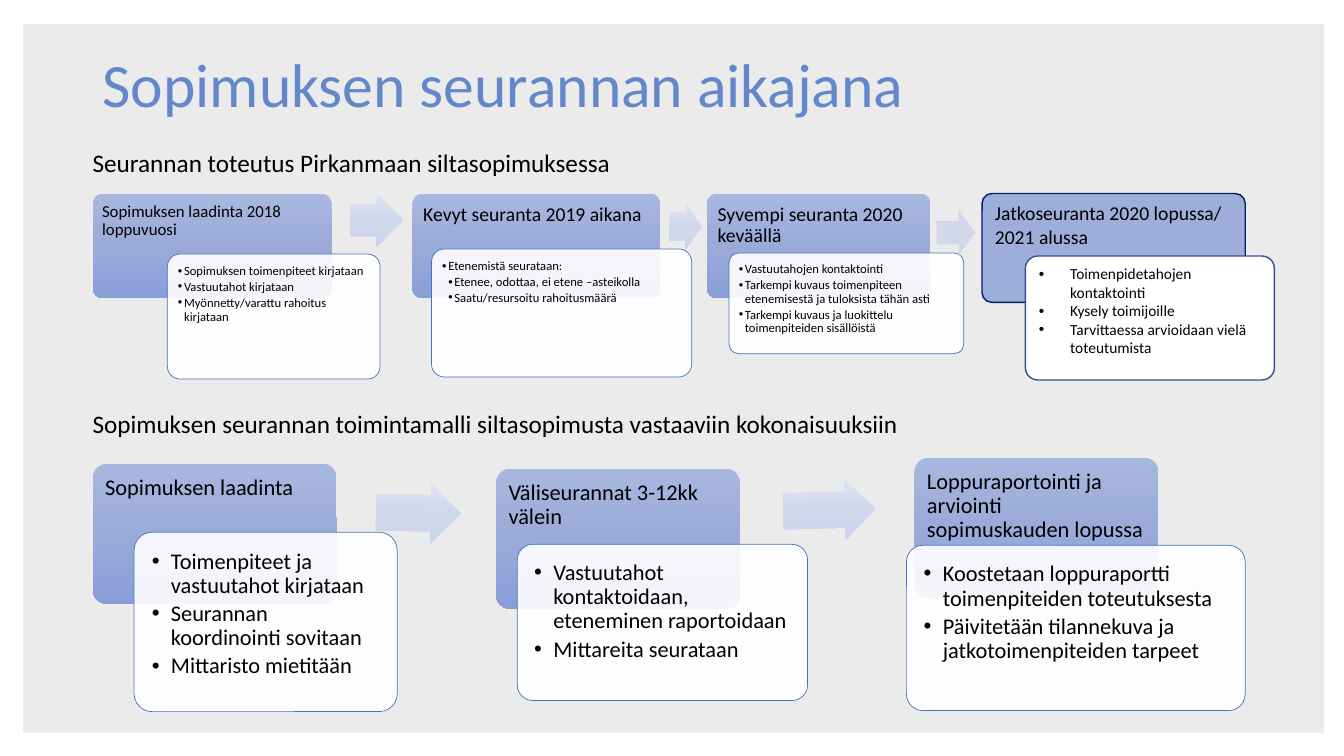
import copy
from dataclasses import dataclass
from typing import Any

import pptx
import pptx.dml.color
import pptx.enum.shapes
import pptx.enum.text
import pptx.oxml.ns
import pptx.shapes.autoshape
import pptx.util
from lxml import etree

Inches = pptx.util.Inches
Pt = pptx.util.Pt
Kind = pptx.enum.shapes.MSO_SHAPE
Anchor = pptx.enum.text.MSO_ANCHOR
Align = pptx.enum.text.PP_ALIGN
Shape = pptx.shapes.autoshape.Shape
qn = pptx.oxml.ns.qn
Area = tuple[float, float, float, float]

HUES = {
    "panel": "EBEBEB", "title": "6288CB", "text": "000000", "white": "FFFFFF",
    "edge": "4472C4", "navy": "002060", "steel": "325491",
    "last": "9DAEDA", "arrow": "D1D8EC",
}
HEAD_FADE = ("A8B7DF", "9AABD9", "889ED7")
ARROW_FADE = ("DEE3F2", "D2D8EC", "CCD3EB")
PAD_RATE = 0.0077  # inches of inset per point of text
CURVE = 0.29  # share of the corner radius that insets text


@dataclass
class Look:
    size: float
    pads: tuple[float, float]
    lead: float = 0.9
    gap: float = 0
    dent: float = 0


@dataclass
class Item:
    text: str
    level: int = 1


@dataclass
class Card:
    head: Area
    name: str
    size: float
    body: Area
    items: list[Item]
    small: float
    dent: float


@dataclass
class Arrow:
    area: Area
    turn: float = 0


def rgb(hue: str) -> pptx.dml.color.RGBColor:
    return pptx.dml.color.RGBColor.from_string(hue)


def apply(thing: Any, form: dict[str, Any]) -> None:
    for key, value in form.items():
        setattr(thing, key, value)


def fade(shape: Shape, hues: tuple[str, ...]) -> None:
    shape.fill.gradient()
    shape.fill.gradient_angle = 270
    stops = shape.element.spPr.find(".//" + qn("a:gsLst"))
    stops.insert(1, copy.deepcopy(stops[0]))
    for place, (stop, hue) in enumerate(zip(shape.fill.gradient_stops, hues)):
        stop.color.rgb = rgb(hue)
        stop.position = place / 2


def add_form(slide: Any, kind: Any, area: Area, fill: str | tuple[str, ...],
             line: tuple[str, float] | None = None, alpha: int = 100) -> Shape:
    shape = slide.shapes.add_shape(kind, *map(Inches, area))
    shape.shadow.inherit = False
    if isinstance(fill, tuple):
        fade(shape, fill)
    else:
        shape.fill.solid()
        shape.fill.fore_color.rgb = rgb(fill)
    if alpha < 100:
        tint = shape.element.spPr.find(qn("a:solidFill"))[0]
        etree.SubElement(tint, qn("a:alpha"), val=str(alpha * 1000))
    if line:
        shape.line.color.rgb = rgb(line[0])
        shape.line.width = Pt(line[1])
    else:
        shape.line.fill.background()
    return shape


def write(shape: Any, items: list[Item], look: Look, hue: str = HUES["text"],
          anchor: Any = Anchor.TOP) -> None:
    frame = shape.text_frame
    side, top = map(Inches, look.pads)
    apply(frame, {"word_wrap": True, "vertical_anchor": anchor, "margin_left": side,
                  "margin_right": side, "margin_top": top, "margin_bottom": top})
    for index, item in enumerate(items):
        para = frame.paragraphs[0] if index == 0 else frame.add_paragraph()
        para.text = item.text
        apply(para, {"alignment": Align.LEFT, "line_spacing": look.lead,
                     "space_after": Pt(look.gap), "level": item.level})
        font = para.runs[0].font
        apply(font, {"name": "Calibri", "size": Pt(look.size)})
        font.color.rgb = rgb(hue)
        if look.dent:
            props = para._p.get_or_add_pPr()
            props.set("marL", str(Inches(look.dent * max(item.level, 1))))
            props.set("indent", str(Inches(-look.dent)))
            etree.SubElement(props, qn("a:buFont"), typeface="Arial")
            etree.SubElement(props, qn("a:buChar"), char="•")


def add_label(slide: Any, area: Area, text: str, look: Look, **style: Any) -> None:
    write(slide.shapes.add_textbox(*map(Inches, area)), [Item(text, 0)], look, **style)


def add_card(slide: Any, card: Card) -> None:
    head = add_form(slide, Kind.ROUNDED_RECTANGLE, card.head, HEAD_FADE)
    head.adjustments[0] = 0.1
    pad = card.size * PAD_RATE - CURVE * 0.1 * min(card.head[2:])
    write(head, [Item(card.name, 0)], Look(card.size, (pad, pad)))
    body = add_form(slide, Kind.ROUNDED_RECTANGLE, card.body, HUES["white"],
                    (HUES["edge"], 0.5), 90)
    body.adjustments[0] = 0.1
    pad = card.small * PAD_RATE
    write(body, card.items,
          Look(card.small, (pad, pad), gap=card.small * 0.18, dent=card.dent))


def add_arrow(slide: Any, arrow: Arrow) -> None:
    shape = add_form(slide, Kind.RIGHT_ARROW, arrow.area, ARROW_FADE)
    shape.rotation = arrow.turn
    shape.adjustments[0], shape.adjustments[1] = 0.6, 0.5


def top_card(left: float, width: float, name: str, size: float, body: Area,
             items: list[Item]) -> Card:
    return Card((left, 1.92, width, 1.04), name, size, body, items, 9, 0.06)


def low_card(left: float, top: float, name: str, body: Area, *texts: str) -> Card:
    return Card((left, top, 2.42, 1.39), name, 16, body, [Item(t) for t in texts], 16, 0.19)


CARDS = [
    top_card(0.92, 2.37, "Sopimuksen laadinta 2018 loppuvuosi", 12, (1.66, 2.52, 2.11, 1.24),
             [Item("Sopimuksen toimenpiteet kirjataan"), Item("Vastuutahot kirjataan"),
              Item("Myönnetty/varattu rahoitus kirjataan")]),
    top_card(4.09, 2.46, "Kevyt seuranta 2019 aikana", 14, (4.28, 2.47, 2.58, 1.27),
             [Item("Etenemistä seurataan:"), Item("Etenee, odottaa, ei etene –asteikolla", 2),
              Item("Saatu/resursoitu rahoitusmäärä", 2)]),
    top_card(7.01, 2.22, "Syvempi seuranta 2020 keväällä", 14, (7.23, 2.51, 2.33, 1),
             [Item("Vastuutahojen kontaktointi"),
              Item("Tarkempi kuvaus toimenpiteen etenemisestä ja tuloksista tähän asti"),
              Item("Tarkempi kuvaus ja luokittelu toimenpiteiden sisällöistä")]),
    low_card(0.92, 4.6, "Sopimuksen laadinta", (1.33, 5.28, 2.61, 1.78),
             "Toimenpiteet ja vastuutahot kirjataan", "Seurannan koordinointi sovitaan",
             "Mittaristo mietitään"),
    low_card(4.92, 4.65, "Väliseurannat 3-12kk välein", (5.13, 5.4, 2.88, 1.55),
             "Vastuutahot kontaktoidaan, eteneminen raportoidaan", "Mittareita seurataan"),
    low_card(9.07, 4.54, "Loppuraportointi ja arviointi sopimuskauden lopussa",
             (8.99, 5.41, 3.36, 1.64), "Koostetaan loppuraportti toimenpiteiden toteutuksesta",
             "Päivitetään tilannekuva ja jatkotoimenpiteiden tarpeet"),
]
ARROWS = [
    Arrow((3.47, 1.92, 0.53, 0.53)), Arrow((6.64, 2.02, 0.32, 0.46), 1.4),
    Arrow((3.73, 4.79, 0.84, 0.6), 0.8), Arrow((7.77, 4.76, 0.91, 0.6), 358.5),
]


def main() -> None:
    deck = pptx.Presentation()
    apply(deck, {"slide_width": Inches(13.33), "slide_height": Inches(7.5)})
    slide = deck.slides.add_slide(deck.slide_layouts[6])

    # Panel and headings
    add_form(slide, Kind.RECTANGLE, (0.23, 0.24, 12.9, 7.03), HUES["panel"])
    add_label(slide, (0.92, 0.14, 11.5, 1.45), "Sopimuksen seurannan aikajana",
              Look(44, (0.1, 0.05)), hue=HUES["title"], anchor=Anchor.MIDDLE)
    plain = Look(18, (0.1, 0.05), lead=1.0)
    add_label(slide, (0.82, 1.41, 6, 0.4),
              "Seurannan toteutus Pirkanmaan siltasopimuksessa", plain)
    add_label(slide, (0.82, 4, 9.36, 0.71),
              "Sopimuksen seurannan toimintamalli siltasopimusta vastaaviin kokonaisuuksiin", plain)

    # Both timelines
    for card in CARDS:
        add_card(slide, card)
    for arrow in ARROWS:
        add_arrow(slide, arrow)

    # Follow-up step
    head = add_form(slide, Kind.ROUNDED_RECTANGLE, (9.74, 1.92, 2.61, 1.08),
                    HUES["last"], (HUES["navy"], 1))
    head.adjustments[0] = 0.09
    write(head, [Item("Jatkoseuranta 2020 lopussa/ 2021 alussa", 0)],
          Look(14, (0.1, 0.05), lead=1.0))
    body = add_form(slide, Kind.ROUNDED_RECTANGLE, (10.17, 2.54, 2.47, 1.23),
                    HUES["white"], (HUES["steel"], 1))
    body.adjustments[0] = 0.1
    tasks = ("Toimenpidetahojen kontaktointi", "Kysely toimijoille",
             "Tarvittaessa arvioidaan vielä toteutumista")
    write(body, [Item(task, 0) for task in tasks], Look(11, (0.1, 0.05), lead=1.0, dent=0.31))
    last = add_form(slide, Kind.RIGHT_ARROW, (9.29, 2.08, 0.38, 0.46), HUES["arrow"])
    last.adjustments[1] = 0.43

    deck.save("out.pptx")


if __name__ == "__main__":
    main()
